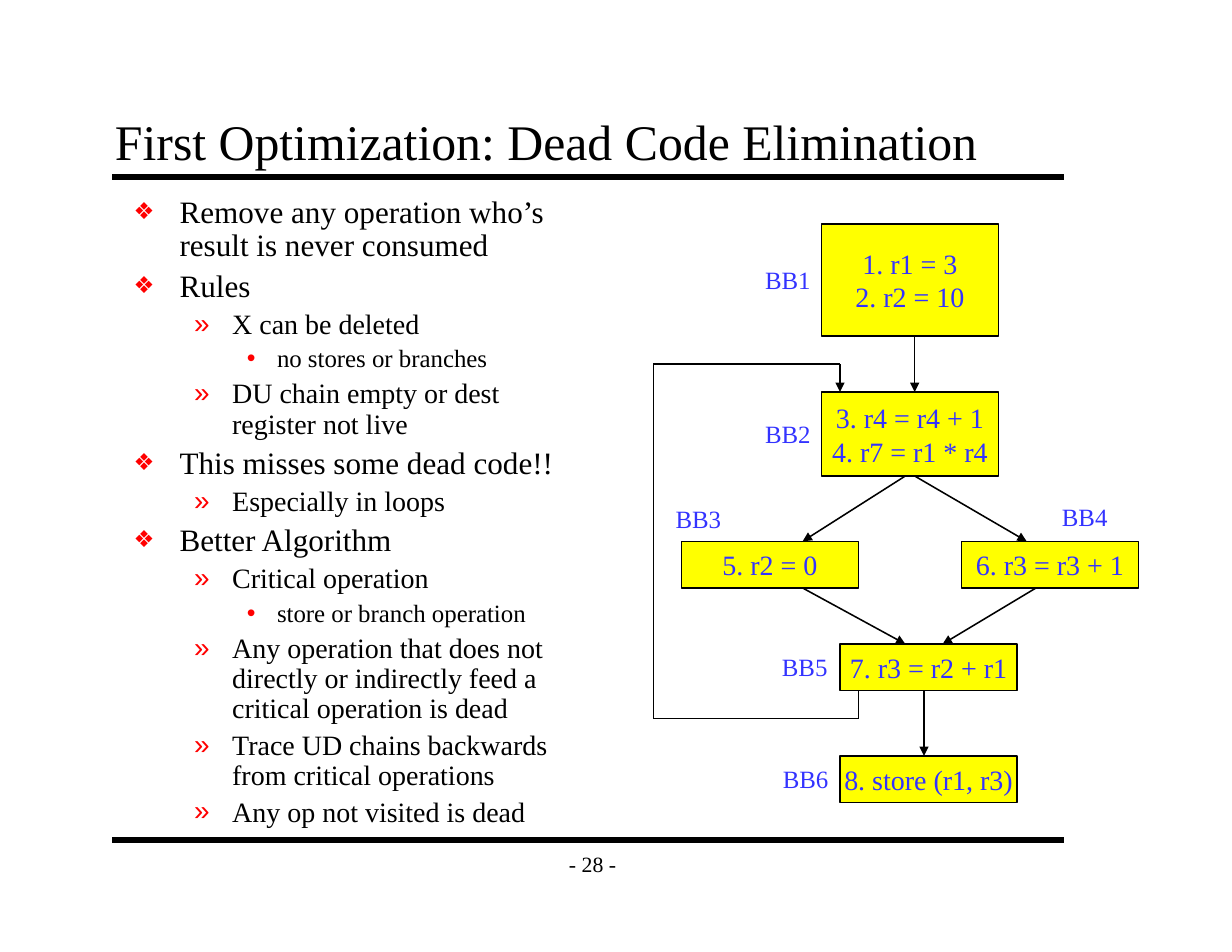
from pptx import Presentation, util as u
from pptx.dml.color import RGBColor
from pptx.enum import shapes, text
from pptx.oxml.ns import qn
from lxml import etree

COLORS = {"ink": "000000", "box": "FFFF00", "code": "3333FF", "bullet": "FF0000"}
FONT = "Times New Roman"
GRID = u.Inches(1 / 12)

TITLE = "First Optimization: Dead Code Elimination"
OUTLINE = [
    (0, "Remove any operation who’s result is never consumed"),
    (0, "Rules"),
    (1, "X can be deleted"),
    (2, "no stores or branches"),
    (1, "DU chain empty or dest register not live"),
    (0, "This misses some dead code!!"),
    (1, "Especially in loops"),
    (0, "Better Algorithm"),
    (1, "Critical operation"),
    (2, "store or branch operation"),
    (1, "Any operation that does not directly or indirectly feed a critical operation is dead"),
    (1, "Trace UD chains backwards from critical operations"),
    (1, "Any op not visited is dead"),
]
LEVELS = [
    {"size": 20, "margin": 0.41, "hanging": 0.41, "bullet": "❖", "percent": 75},
    {"size": 18, "margin": 0.88, "hanging": 0.34, "bullet": "»", "percent": 100},
    {"size": 16, "margin": 1.28, "hanging": 0.27, "bullet": "•", "percent": 100},
]
BLOCK_WIDTH = 19
BLOCKS = [
    ("BB1", (88, 24), 12, ["1. r1 = 3", "2. r2 = 10"], (80.8, 27.8)),
    ("BB2", (88, 42), 9, ["3. r4 = r4 + 1", "4. r7 = r1 * r4"], (80.8, 44.3)),
    ("BB3", (73, 58), 5, ["5. r2 = 0"], (71.2, 53.4)),
    ("BB4", (103, 58), 5, ["6. r3 = r3 + 1"], (112.6, 53.2)),
    ("BB5", (90, 69), 5, ["7. r3 = r2 + r1"], (82.6, 69.2)),
    ("BB6", (90, 81), 5, ["8. store (r1, r3)"], (82.7, 81.2)),
]
FLOWS = [
    [(98, 36), (98, 42)],
    [(97, 51), (86, 58)],
    [(98, 51), (110, 58)],
    [(86, 63), (97, 69)],
    [(111, 63), (101, 69)],
    [(99, 74), (99, 81)],
    [(92, 74), (92, 77), (70, 77), (70, 39), (90, 39), (90, 42)],
]
RULES = [[(12, 19), (114, 19)], [(12, 90), (114, 90)]]


def cells(*values):
    return [int(value * GRID) for value in values]


def apply(target, values):
    for name, value in values.items():
        setattr(target, name, value)


def write(shape, lines, size, color, align, **frame_format):
    frame = shape.text_frame
    frame.text = "\n".join(lines)
    apply(frame, {"auto_size": text.MSO_AUTO_SIZE.NONE, **frame_format})
    for paragraph in frame.paragraphs:
        paragraph.alignment = align
        style(paragraph, size, color)


def style(paragraph, size, color):
    for run in paragraph.runs:
        apply(run.font, {"name": FONT, "size": u.Pt(size)})
        run.font.color.rgb = RGBColor.from_string(COLORS[color])


def place(shape, *box):
    apply(shape, dict(zip(("left", "top", "width", "height"), cells(*box))))


def add_bullet(paragraph, level):
    properties = paragraph._p.get_or_add_pPr()
    properties.set("marL", str(u.Inches(level["margin"])))
    properties.set("indent", str(-u.Inches(level["hanging"])))
    color = etree.SubElement(properties, qn("a:buClr"))
    etree.SubElement(color, qn("a:srgbClr"), val=COLORS["bullet"])
    etree.SubElement(properties, qn("a:buSzPct"), val=str(level["percent"] * 1000))
    etree.SubElement(properties, qn("a:buChar"), char=level["bullet"])


def draw_path(slide, points, width, arrow=False):
    for start, end in zip(points, points[1:]):
        line = slide.shapes.add_connector(
            shapes.MSO_CONNECTOR.STRAIGHT, *cells(*start, *end))
        line.line.width = u.Pt(width)
        line.line.color.rgb = RGBColor.from_string(COLORS["ink"])
        etree.SubElement(line._element.spPr, qn("a:effectLst"))
    if arrow:
        etree.SubElement(line.line._get_or_add_ln(), qn("a:tailEnd"), type="triangle")


def main():
    presentation = Presentation()
    apply(presentation, {"slide_width": u.Inches(11), "slide_height": u.Inches(8.5)})
    slide = presentation.slides.add_slide(presentation.slide_layouts[1])
    left, center = text.PP_ALIGN.LEFT, text.PP_ALIGN.CENTER
    middle = text.MSO_ANCHOR.MIDDLE
    margins = {"margin_left": u.Inches(0.11), "margin_right": u.Inches(0.11),
               "margin_top": u.Inches(0.06), "margin_bottom": u.Inches(0.06)}

    for rule in RULES:
        draw_path(slide, rule, 4)

    number = slide.shapes.add_textbox(*cells(59, 90, 9, 5))
    write(number, ["- 28 -"], 14, "ink", center,
          word_wrap=False, vertical_anchor=middle, **margins)

    title = slide.shapes.title
    place(title, 11, 11, 102, 8)
    write(title, [TITLE], 32, "ink", left,
          vertical_anchor=text.MSO_ANCHOR.BOTTOM, **margins)

    body = slide.placeholders[1]
    place(body, 13, 20.3, 49.5, 68.4)
    write(body, [line for _, line in OUTLINE], 20, "ink", left,
          vertical_anchor=text.MSO_ANCHOR.TOP, **margins)
    for paragraph, (depth, _) in zip(body.text_frame.paragraphs, OUTLINE):
        level = LEVELS[depth]
        apply(paragraph, {"level": depth, "line_spacing": 0.9,
                          "space_before": u.Pt(round(level["size"] * 0.23, 1))})
        style(paragraph, level["size"], "ink")
        add_bullet(paragraph, level)

    for _, corner, height, code, _ in BLOCKS:
        block = slide.shapes.add_shape(
            shapes.MSO_SHAPE.RECTANGLE, *cells(*corner, BLOCK_WIDTH, height))
        block.shadow.inherit = False
        block.fill.solid()
        block.fill.fore_color.rgb = RGBColor.from_string(COLORS["box"])
        block.line.color.rgb = RGBColor.from_string(COLORS["ink"])
        block.line.width = u.Pt(1)
        write(block, code, 18, "code", center, word_wrap=False, vertical_anchor=middle)

    for flow in FLOWS:
        draw_path(slide, flow, 1, arrow=True)

    for name, _, _, _, corner in BLOCKS:
        label = slide.shapes.add_textbox(*cells(*corner, 7.3, 4.4))
        write(label, [name], 16, "code", left, word_wrap=False)

    presentation.save("out.pptx")


if __name__ == "__main__":
    main()
